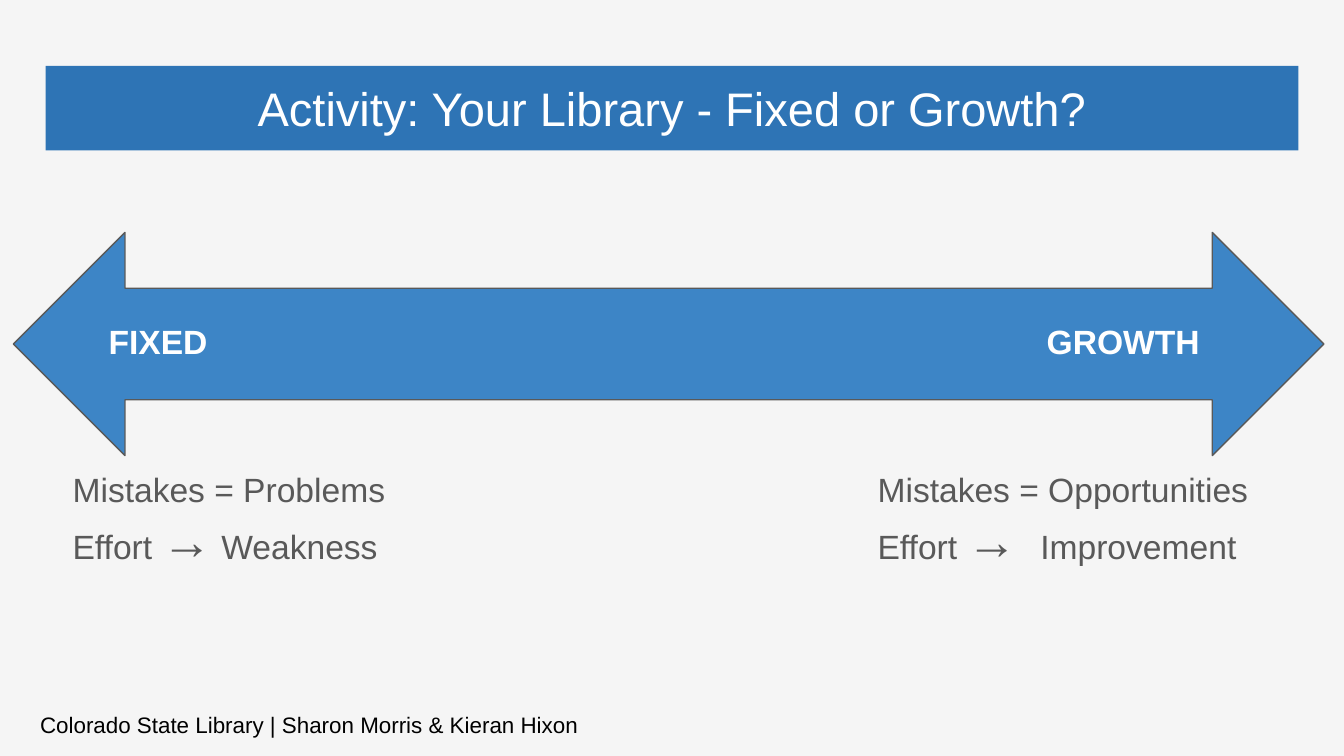
import pptx
import pptx.util
import pptx.dml.color
import pptx.enum.shapes
import pptx.enum.text
from lxml import etree

W = 10
H = W * 9 / 16
COLORS = {"page": "F5F5F5", "banner": "2E74B5", "arrow": "3D85C6",
          "grey": "595959", "white": "FFFFFF", "black": "000000"}
ALIGN = pptx.enum.text.PP_ALIGN
ANCHOR = pptx.enum.text.MSO_ANCHOR


def paint(fill, color):
    fill.solid()
    fill.fore_color.rgb = pptx.dml.color.RGBColor.from_string(COLORS[color])


def place(sp, x, y, w, h):
    """Position a shape by shares of the slide's size."""
    sp.left, sp.width = (pptx.util.Inches(v * W) for v in (x, w))
    sp.top, sp.height = (pptx.util.Inches(v * H) for v in (y, h))


def write(sp, paragraphs, size=18, color="grey", bold=False,
          align=ALIGN.LEFT, anchor=ANCHOR.TOP):
    """Fill a shape with paragraphs, each a list of (text, size or None)."""
    tf = sp.text_frame
    tf.word_wrap = True
    tf.auto_size = pptx.enum.text.MSO_AUTO_SIZE.NONE
    tf.vertical_anchor = anchor
    tf.margin_left = tf.margin_right = pptx.util.Inches(0.1)
    tf.margin_top = tf.margin_bottom = pptx.util.Inches(0.1)
    for i, runs in enumerate(paragraphs):
        p = tf.paragraphs[0] if i == 0 else tf.add_paragraph()
        p.alignment = align
        p.space_before = pptx.util.Pt(0)
        for text, run_size in runs:
            r = p.add_run()
            r.text = text
            r.font.name = "Arial"
            r.font.size = pptx.util.Pt(run_size or size)
            r.font.bold = bold
            paint(r.font.fill, color)


def add_label(s, text, box, **fmt):
    sp = s.shapes.add_textbox(0, 0, 0, 0)
    place(sp, *box)
    write(sp, [[(text, None)]], **fmt)


def fill_list(sp, box, paragraphs):
    """Set a body placeholder as a list without bullets."""
    place(sp, *box)
    write(sp, paragraphs)
    for p in sp.text_frame.paragraphs:
        pPr = p._p.get_or_add_pPr()
        pPr.set("marL", "0")
        pPr.set("indent", "0")
        etree.SubElement(pPr, pptx.oxml.ns.qn("a:buNone"))


def add_arrow(s, box):
    sp = s.shapes.add_shape(
        pptx.enum.shapes.MSO_SHAPE.LEFT_RIGHT_ARROW, 0, 0, 0, 0)
    place(sp, *box)
    sp.shadow.inherit = False
    paint(sp.fill, "arrow")
    paint(sp.line.fill, "grey")
    sp.line.width = pptx.util.Pt(0.75)


def main():
    prs = pptx.Presentation()
    prs.slide_width, prs.slide_height = pptx.util.Inches(W), pptx.util.Inches(H)
    s = prs.slides.add_slide(prs.slide_layouts[3])
    paint(s.background.fill, "page")
    title, fixed, growth = s.placeholders

    # Footer
    add_label(s, "Colorado State Library | Sharon Morris & Kieran Hixon",
              (0.02, 5.19 / H, 0.616, 0.3 / H), size=12, color="black")

    # Title banner
    place(title, 0.034, 0.49 / H, 0.932, 0.63 / H)
    paint(title.fill, "banner")
    write(title, [[("Activity: Your Library - Fixed or Growth?", None)]],
          size=25.2, color="white", align=ALIGN.CENTER, anchor=ANCHOR.MIDDLE)

    # Scale from fixed to growth
    add_arrow(s, (0.01, 1.73 / H, 0.975, 1.66 / H))
    for text, x in (("FIXED", 0.071), ("GROWTH", 0.769)):
        add_label(s, text, (x, 2.29 / H, 0.2, 0.52 / H),
                  color="white", bold=True)

    # Mindset under each end of the scale
    for sp, x, w, mistakes, arrow, effort in (
            (fixed, 0.044, 0.26, "Problems", "→", "Weakness"),
            (growth, 0.643, 0.323, "Opportunities", "→ ", "Improvement")):
        fill_list(sp, (x, 3.39 / H, w, 1.54 / H), [
            [(f"Mistakes = {mistakes}", None)],
            [("Effort ", None), (arrow, 27), (f" {effort}", None)]])

    prs.save("out.pptx")


if __name__ == "__main__":
    main()
